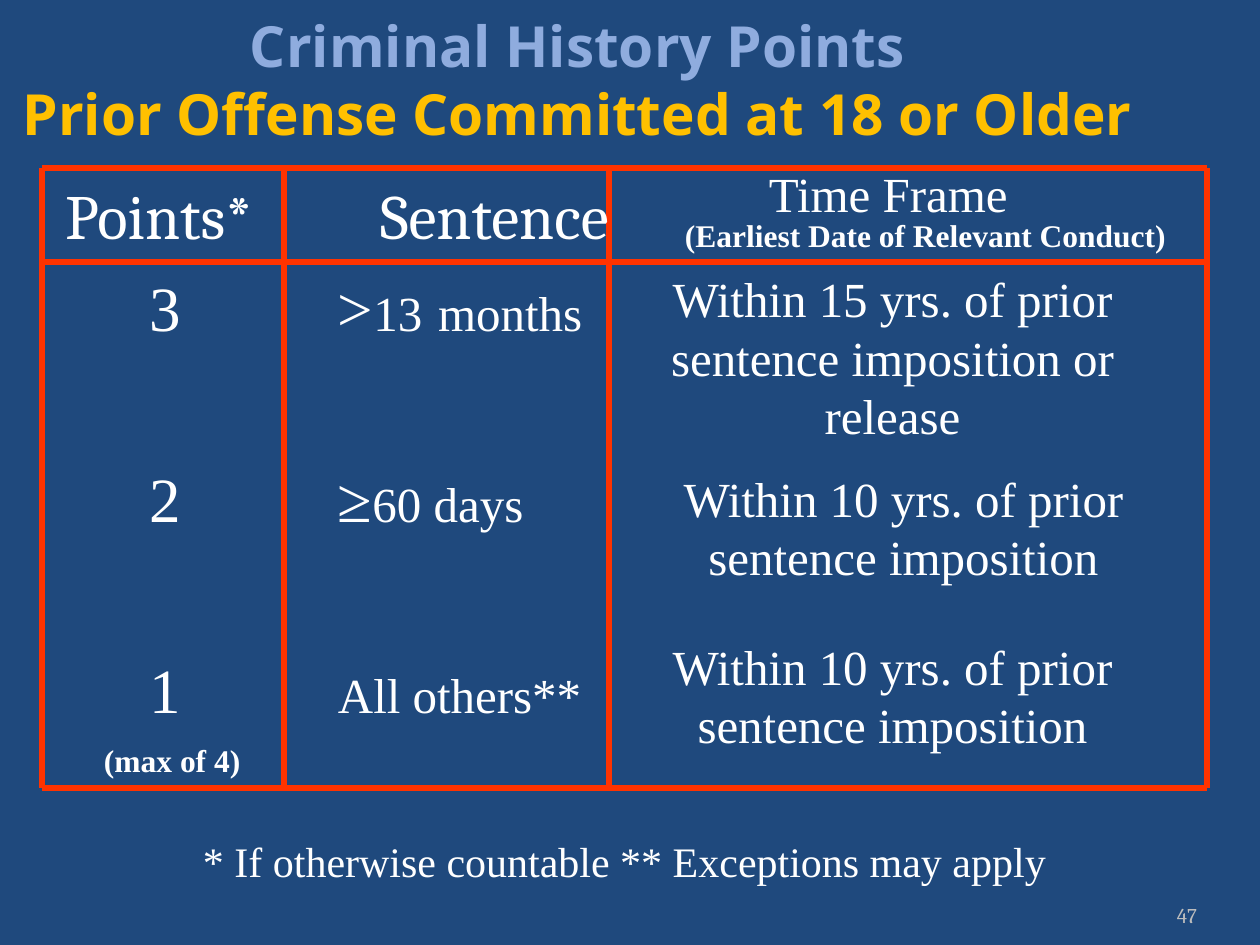
from pptx import Presentation
from pptx.dml.color import RGBColor as Rgb
from pptx.enum.shapes import MSO_CONNECTOR as Conn
from pptx.enum.text import MSO_ANCHOR as Anchor, PP_ALIGN as Align
from pptx.oxml.ns import qn
from pptx.util import Emu, Pt
from lxml.etree import SubElement as Sub

COLORS = {"back": "1F497D", "title": "8FACDE", "gold": "FFC000",
          "rule": "FF3300", "text": "FFFFFF", "page": "BDBDBD"}
SERIF, HEAD, SANS = "Times New Roman", "Cambria", "Open Sans"
COLS = [0, 242, 567, 1165]
ROWS = [0, 94, 620]
ITEMS = [("3", [(">", 36), ("13", 28), (" ", 36), ("months", 28)]),
         ("2", [("≥", 36), ("60 days", 28)]),
         ("1", [("All others**", 28)])]


def px(n):
    return Emu(round(n * 914400 / 126))


def style(font, size, face=SERIF, color="text", bold=False):
    font.size, font.name, font.bold = Pt(size), face, bold
    font.color.rgb = Rgb.from_string(COLORS[color])


def frame(slide, box, left=13):
    area = slide.shapes.add_textbox(*map(px, box)).text_frame
    area.word_wrap = True
    area.margin_left = px(left)
    area.margin_right = px(13)
    return area


def write(slide, box, text, size, align=Align.LEFT, **look):
    area = frame(slide, box)
    para = area.paragraphs[0]
    para.text, para.alignment = text, align
    style(para.font, size, **look)
    return area


def add_tab(para, pos):
    tabs = Sub(para._p.get_or_add_pPr(), qn("a:tabLst"))
    Sub(tabs, qn("a:tab"), pos=str(px(pos)), algn="l")


def draw_line(slide, x1, y1, x2, y2):
    line = slide.shapes.add_connector(Conn.STRAIGHT, *map(px, (x1, y1, x2, y2)))
    line.line.color.rgb = Rgb.from_string(COLORS["rule"])
    line.line.width = Pt(3)
    Sub(line._element.spPr, qn("a:effectLst"))


def add_title(slide, x, y, w, h):
    area = frame(slide, (x, y, w, h))
    area.vertical_anchor = Anchor.MIDDLE
    para = area.paragraphs[0]
    para.alignment = Align.CENTER
    lines = [("Criminal History Points", "title"),
             ("Prior Offense Committed at 18 or Older", "gold")]
    for i, (text, color) in enumerate(lines):
        if i:
            para.add_line_break()
        run = para.add_run()
        run.text = text
        style(run.font, 32.4, SANS, color, True)


def add_grid(slide, x, y):
    for col in COLS:
        draw_line(slide, x + col, y, x + col, y + ROWS[-1])
    for row in ROWS:
        draw_line(slide, x, y + row, x + COLS[-1], y + row)


def add_header(slide, x, y):
    area = frame(slide, (x, y + 11, COLS[2] + 30, 84), 23)
    para = area.paragraphs[0]
    para.text, para.line_spacing = "Points*\tSentence", 0.9
    style(para.font, 36, HEAD)
    add_tab(para, 315)
    write(slide, (x + 714, y - 11, 305, 72), "Time Frame", 28)
    write(slide, (x + 630, y + 42, 514, 50),
          "(Earliest Date of Relevant Conduct)", 18, bold=True)


def add_points(slide, x, y):
    area = frame(slide, (x + 11, y, COLS[2] - 11, 526), 97)
    for i, (points, parts) in enumerate(ITEMS):
        para = area.paragraphs[0] if i == 0 else area.add_paragraph()
        if i:
            para.space_before = Pt(66)
        style(para.font, 36)
        add_tab(para, 188)
        for text, size in [(points + "\t", 36)] + parts:
            run = para.add_run()
            run.text = text
            style(run.font, size)
    write(slide, (x + 49, y + 473, 182, 50), "(max of 4)", 18, bold=True)


def add_times(slide, x, y):
    first = write(slide, (x + 546, y, 609, 189),
                  "Within 15 yrs. of prior\vsentence imposition or release",
                  28, Align.CENTER)
    first.paragraphs[0]._p.get_or_add_pPr().set("indent", str(-px(60)))
    for left, top, wide in [(578, 200, 567), (588, 368, 525)]:
        write(slide, (x + left, y + top, wide, 130),
              "Within 10 yrs. of prior sentence imposition", 28, Align.CENTER)


def add_footer(slide, x, y, w):
    write(slide, (x, y, w, 63),
          "* If otherwise countable ** Exceptions may apply", 24, Align.CENTER)
    page = write(slide, (x + 1050, y + 55, 105, 50), "47", 12, Align.RIGHT,
                 face=HEAD, color="page")
    page.vertical_anchor = Anchor.BOTTOM
    page.margin_right = 0


def main():
    deck = Presentation()
    deck.slide_width, deck.slide_height = px(1260), px(945)
    slide = deck.slides.add_slide(deck.slide_layouts[6])
    fill = slide.background.fill
    fill.solid()
    fill.fore_color.rgb = Rgb.from_string(COLORS["back"])
    add_title(slide, 0, 0, 1155, 157)
    add_grid(slide, 42, 168)
    add_header(slide, 42, 168)
    add_points(slide, 42, 262)
    add_times(slide, 42, 262)
    add_footer(slide, 42, 829, 1165)
    deck.save("out.pptx")


if __name__ == "__main__":
    main()
